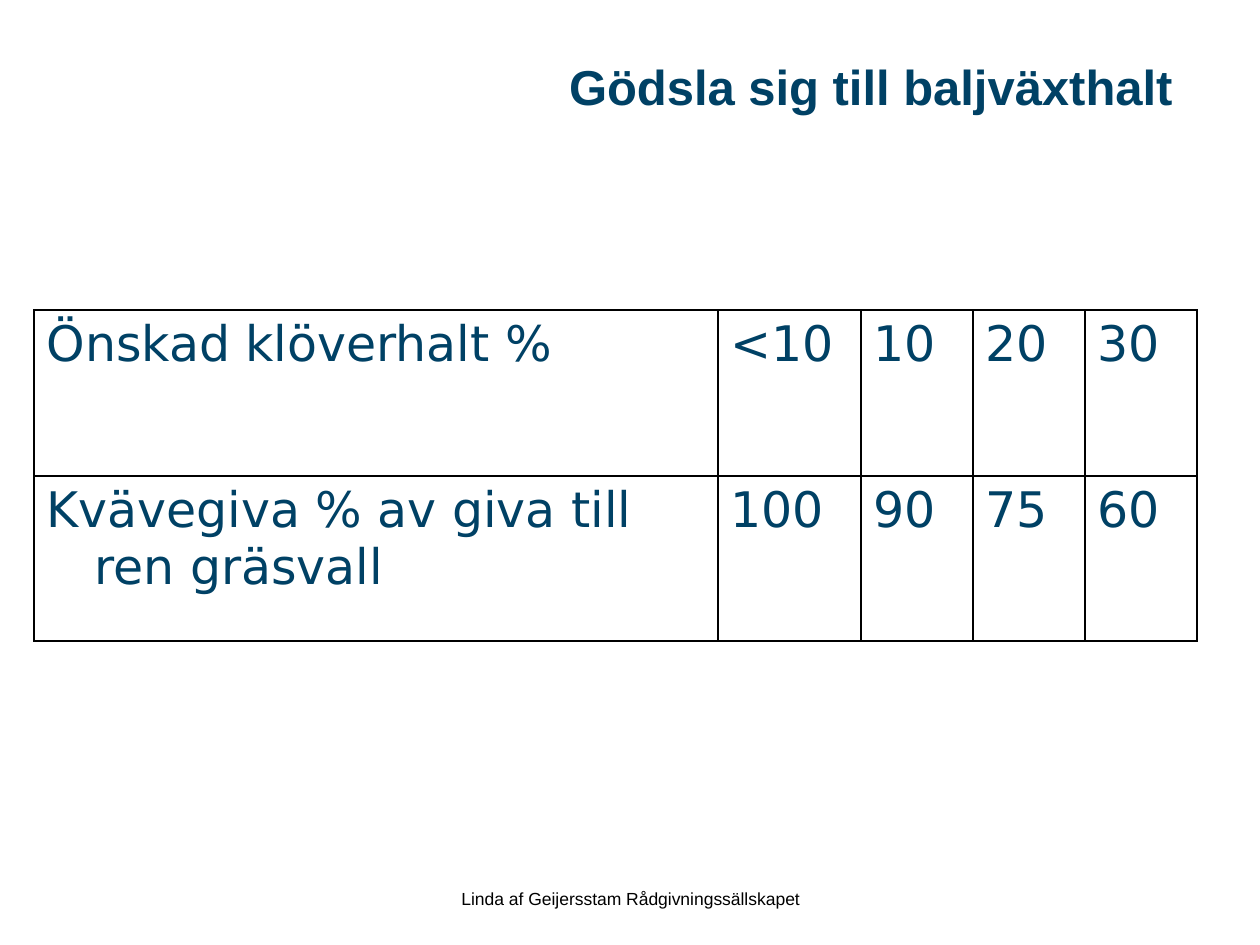
from dataclasses import dataclass

from lxml import etree
from pptx import Presentation
from pptx import util as u
from pptx.dml.color import RGBColor
from pptx.enum import text
from pptx.oxml import ns

EMU_PER_INCH = 914400
PX_PER_INCH = 126


@dataclass(frozen=True)
class Theme:
    heading_font: str = "Arial"
    table_font: str = "DejaVu Sans"
    blue: str = "004165"
    black: str = "000000"
    large: int = 28
    small: int = 10
    border: int = 1


THEME = Theme()
ROWS = [
    ["Önskad klöverhalt %", "<10", "10", "20", "30"],
    ["Kvävegiva % av giva till ren gräsvall", "100", "90", "75", "60"],
]
COLUMN_WIDTHS = [684, 143, 112, 112, 112]
ROW_HEIGHTS = [166, 165]
HANGING_INDENT = 48


def px(length):
    return u.Emu(round(length * EMU_PER_INCH / PX_PER_INCH))


def style_font(paragraph, name, size, color, bold=False):
    font = paragraph.font
    font.name = name
    font.size = u.Pt(size)
    font.color.rgb = RGBColor.from_string(color)
    font.bold = bold


def add_text(slide, box, content, alignment, anchor, size, color, bold=False):
    shape = slide.shapes.add_textbox(*map(px, box))
    frame = shape.text_frame
    frame.word_wrap = True
    frame.vertical_anchor = anchor
    paragraph = frame.paragraphs[0]
    paragraph.text = content
    paragraph.alignment = alignment
    style_font(paragraph, THEME.heading_font, size, color, bold)


def add_borders(cell):
    properties = cell._tc.get_or_add_tcPr()
    for position, side in enumerate(("lnL", "lnR", "lnT", "lnB")):
        line = etree.Element(ns.qn(f"a:{side}"), w=str(u.Pt(THEME.border)))
        fill = etree.SubElement(line, ns.qn("a:solidFill"))
        etree.SubElement(fill, ns.qn("a:srgbClr"), val=THEME.black)
        properties.insert(position, line)


def fill_cell(cell, content):
    cell.fill.background()
    add_borders(cell)
    paragraph = cell.text_frame.paragraphs[0]
    paragraph.text = content
    indent = px(HANGING_INDENT)
    properties = paragraph._p.get_or_add_pPr()
    properties.set("marL", str(indent))
    properties.set("indent", str(-indent))
    style_font(paragraph, THEME.table_font, THEME.large, THEME.blue)


def add_grid(slide, left, top):
    width, height = sum(COLUMN_WIDTHS), sum(ROW_HEIGHTS)
    frame = slide.shapes.add_table(
        len(ROWS), len(COLUMN_WIDTHS), *map(px, (left, top, width, height))
    )
    table = frame.table
    table.first_row = False
    table.horz_banding = False
    for column, column_width in zip(table.columns, COLUMN_WIDTHS):
        column.width = px(column_width)
    for row, row_height, values in zip(table.rows, ROW_HEIGHTS, ROWS):
        row.height = px(row_height)
        for cell, value in zip(row.cells, values):
            fill_cell(cell, value)


def main():
    presentation = Presentation()
    presentation.slide_width = px(1260)
    presentation.slide_height = px(945)
    slide = presentation.slides.add_slide(presentation.slide_layouts[6])
    add_text(slide, (268, 49, 917, 74), "Gödsla sig till baljväxthalt",
             text.PP_ALIGN.RIGHT, text.MSO_ANCHOR.MIDDLE,
             THEME.large, THEME.blue, bold=True)
    add_grid(slide, 34, 310)
    add_text(slide, (431, 882, 399, 42), "Linda af Geijersstam Rådgivningssällskapet",
             text.PP_ALIGN.CENTER, text.MSO_ANCHOR.TOP, THEME.small, THEME.black)
    presentation.save("out.pptx")


if __name__ == "__main__":
    main()
